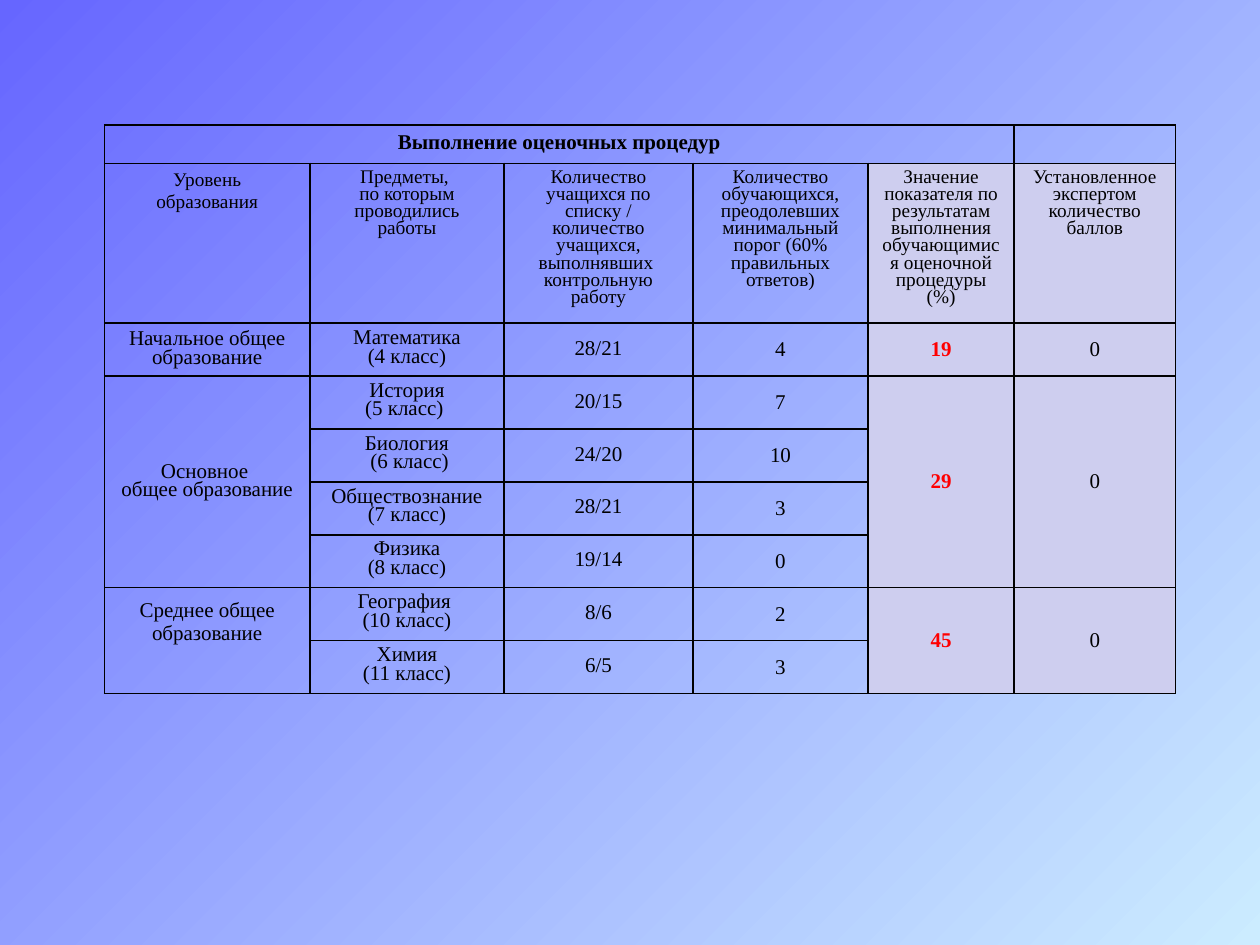
from dataclasses import dataclass

from lxml.etree import SubElement
from pptx import Presentation
from pptx.dml.color import RGBColor
from pptx.enum.text import MSO_ANCHOR as Anchor, PP_ALIGN as Align
from pptx.oxml.ns import qn
from pptx.util import Inches, Pt


@dataclass(frozen=True)
class Theme:
    font: str = "Times New Roman"
    body_size: int = 12
    heading_size: int = 11
    border_width: int = 1
    tight: float = 0.8
    ink: str = "000000"
    accent: str = "FF0000"
    score_fill: str = "CECEEF"
    sky_start: str = "6666FF"
    sky_end: str = "CCECFF"


THEME = Theme()
COLUMN_WIDTHS = [1.63, 1.54, 1.5, 1.39, 1.16, 1.28]
TITLE_HEIGHT, HEADING_HEIGHT, SUBJECT_HEIGHT = 0.3, 1.27, 0.42
WIDE_INSETS = (0.1, 0.05, 0.1, 0.05)
NARROW_INSETS = (0.07, 0, 0.07, 0)
RAISED_INSETS = (0.1, 0.05, 0.1, 0.34)

HEADINGS = [
    ["Уровень", "образования"],
    ["Предметы, ", "по которым проводились работы"],
    ["Количество учащихся по списку / количество учащихся, выполнявших ",
     "контрольную работу"],
    ["Количество обучающихся, преодолевших минимальный порог (60% правильных ответов)"],
    ["Значение показателя по результатам выполнения обучающимися оценочной процедуры (%)"],
    ["Установленное экспертом количество баллов"],
]
LEVELS = [
    (["Начальное общее образование"], THEME.tight, WIDE_INSETS, "19", "0", [
        (["Математика", "(4 класс)"], "28/21", "4"),
    ]),
    (["Основное ", "общее образование"], THEME.tight, WIDE_INSETS, "29", "0", [
        (["История", "(5 класс) "], "20/15", "7"),
        (["Биология", " (6 класс)"], "24/20", "10"),
        (["Обществознание", "(7 класс)"], "28/21", "3"),
        (["Физика", "(8 класс)"], "19/14", "0"),
    ]),
    (["Среднее общее образование"], None, RAISED_INSETS, "45", "0", [
        (["География ", "(10 класс)"], "8/6", "2"),
        (["Химия", "(11 класс)"], "6/5", "3"),
    ]),
]


def paint_background(slide):
    fill = slide.background.fill
    fill.gradient()
    fill.gradient_angle = 315
    for stop, color in zip(fill.gradient_stops, (THEME.sky_start, THEME.sky_end)):
        stop.color.rgb = RGBColor.from_string(color)


def style_cell(cell, fill_color=None):
    properties = cell._tc.get_or_add_tcPr()
    for side in ("a:lnL", "a:lnR", "a:lnT", "a:lnB"):
        border = SubElement(properties, qn(side), w=str(Pt(THEME.border_width)))
        SubElement(SubElement(border, qn("a:solidFill")), qn("a:srgbClr"), val=THEME.ink)
    if fill_color:
        cell.fill.solid()
        cell.fill.fore_color.rgb = RGBColor.from_string(fill_color)
    else:
        cell.fill.background()


def set_insets(cell, insets):
    (cell.margin_left, cell.margin_top,
     cell.margin_right, cell.margin_bottom) = map(Inches, insets)


def write_cell(cell, lines, size=THEME.body_size, color=THEME.ink, bold=False,
               spacing=None, anchor=Anchor.MIDDLE, insets=NARROW_INSETS):
    set_insets(cell, insets)
    cell.vertical_anchor = anchor
    frame = cell.text_frame
    for index, line in enumerate(lines):
        paragraph = frame.add_paragraph() if index else frame.paragraphs[0]
        paragraph.alignment = Align.CENTER
        if spacing:
            paragraph.line_spacing = spacing
        run = paragraph.add_run()
        run.text = line
        run.font.name = THEME.font
        run.font.size = Pt(size)
        run.font.bold = bold
        run.font.color.rgb = RGBColor.from_string(color)


def write_headings(table):
    table.cell(0, 0).merge(table.cell(0, 4))
    write_cell(table.cell(0, 0), ["Выполнение оценочных процедур"], bold=True,
               spacing=THEME.tight, insets=WIDE_INSETS)
    set_insets(table.cell(0, 5), (0, 0, 0, 0))
    for column, lines in enumerate(HEADINGS):
        write_cell(table.cell(1, column), lines, size=THEME.heading_size,
                   spacing=THEME.tight if column else None,
                   anchor=Anchor.TOP, insets=WIDE_INSETS)


def write_level(table, top_row, level):
    name, name_spacing, name_insets, percent, points, subjects = level
    if len(subjects) > 1:
        for column in (0, 4, 5):
            table.cell(top_row, column).merge(
                table.cell(top_row + len(subjects) - 1, column))
    write_cell(table.cell(top_row, 0), name, spacing=name_spacing, insets=name_insets)
    write_cell(table.cell(top_row, 4), [percent], color=THEME.accent, bold=True)
    write_cell(table.cell(top_row, 5), [points])
    for row, (subject, pupils, passed) in enumerate(subjects, top_row):
        write_cell(table.cell(row, 1), subject, spacing=THEME.tight,
                   anchor=Anchor.TOP, insets=WIDE_INSETS)
        write_cell(table.cell(row, 2), [pupils], spacing=THEME.tight)
        write_cell(table.cell(row, 3), [passed])


def add_results_table(slide, left, top, width, height):
    subject_count = sum(len(level[-1]) for level in LEVELS)
    row_heights = [TITLE_HEIGHT, HEADING_HEIGHT] + [SUBJECT_HEIGHT] * subject_count
    table = slide.shapes.add_table(len(row_heights), len(COLUMN_WIDTHS),
                                   left, top, width, height).table
    table.first_row = table.horz_banding = False
    for column, share in zip(table.columns, COLUMN_WIDTHS):
        column.width = int(width * share / sum(COLUMN_WIDTHS))
    for row, share in zip(table.rows, row_heights):
        row.height = int(height * share / sum(row_heights))
    for row in range(len(row_heights)):
        for column in range(len(COLUMN_WIDTHS)):
            scored = row > 0 and column >= 4
            style_cell(table.cell(row, column), THEME.score_fill if scored else None)
    write_headings(table)
    top_row = 2
    for level in LEVELS:
        write_level(table, top_row, level)
        top_row += len(level[-1])


def main():
    presentation = Presentation()
    presentation.slide_width, presentation.slide_height = Inches(10), Inches(7.5)
    slide = presentation.slides.add_slide(presentation.slide_layouts[6])
    paint_background(slide)
    add_results_table(slide, Inches(0.83), Inches(0.99), Inches(8.5), Inches(4.51))
    presentation.save("out.pptx")


if __name__ == "__main__":
    main()
